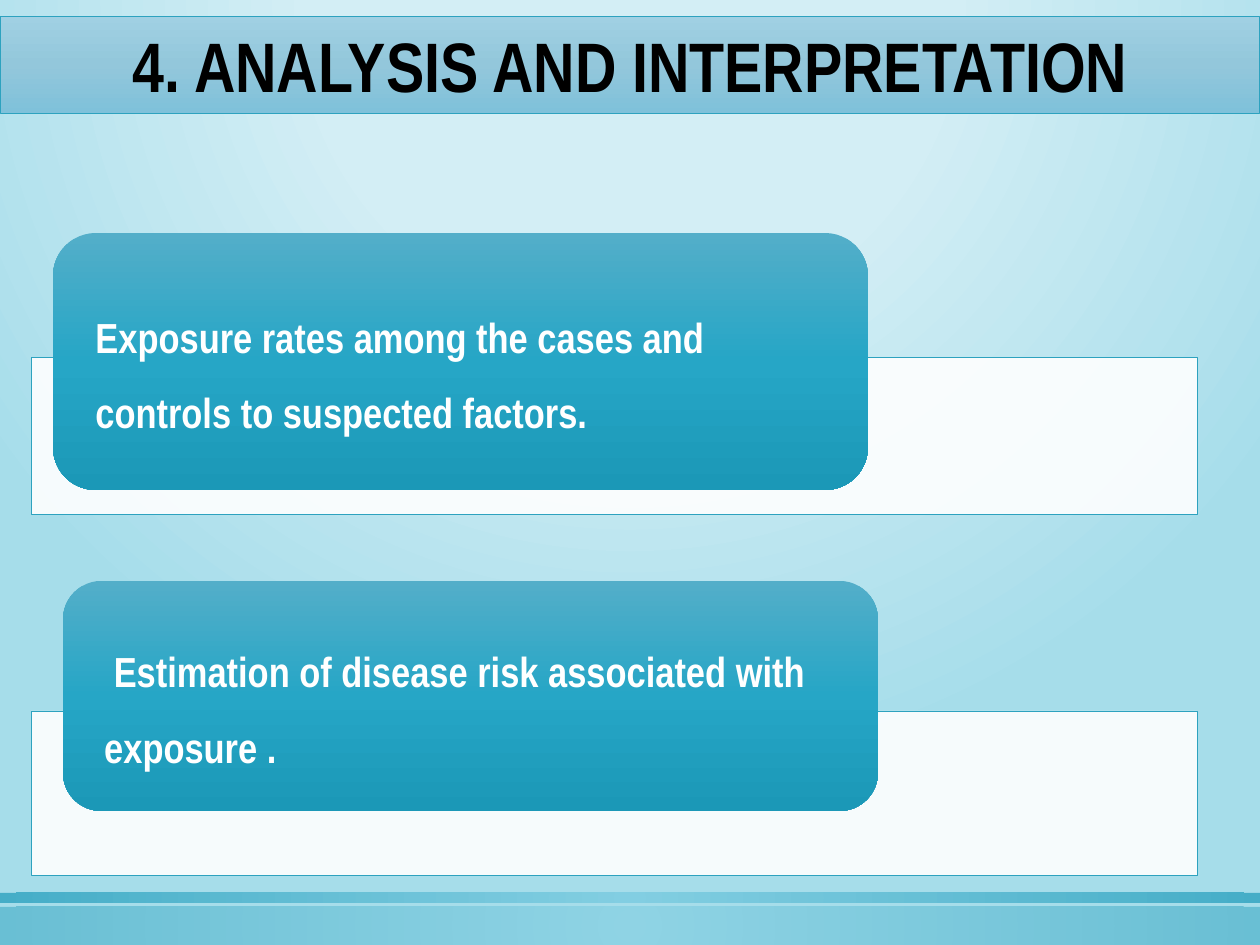
"""Build the slide on analysis and interpretation."""
from lxml import etree
from pptx import Presentation
from pptx import util as u
from pptx.dml.color import RGBColor
from pptx.enum import shapes, text
from pptx.oxml.ns import qn

PX = u.Inches(1) // 126
WIDTH, HEIGHT = 1260, 945
FONT = "Arial Narrow"

BLACK = RGBColor(0x00, 0x00, 0x00)
WHITE = RGBColor(0xFF, 0xFF, 0xFF)
TEAL = RGBColor(0x2D, 0xA2, 0xBF)
AQUA = RGBColor(0x7A, 0xCB, 0xE0)
PALE = RGBColor(0xD3, 0xEE, 0xF5)
SKY = RGBColor(0xA6, 0xDD, 0xEA)
CARD_TOP = RGBColor(0x53, 0xAE, 0xC9)
CARD_MIDDLE = RGBColor(0x26, 0xA6, 0xC6)
CARD_BOTTOM = RGBColor(0x1B, 0x98, 0xB7)
TITLE_TOP = RGBColor(0xA0, 0xD0, 0xE3)
TITLE_MIDDLE = RGBColor(0x93, 0xC7, 0xDB)
TITLE_BOTTOM = RGBColor(0x7F, 0xC1, 0xDA)

TITLE = "4. ANALYSIS AND INTERPRETATION"
TITLE_BOX = (0, 16, WIDTH, 97)
TITLE_INDENT = 38
BACKDROP_STOPS = [(0, PALE), (40, PALE), (100, SKY)]
BACKDROP_FOCUS = (50, -80, 50, 180)
BAR_STOPS = [(0, AQUA), (100, TEAL)]
BAR_FOCUS = (50, 50, 50, 50)
CARD_STOPS = [(0, CARD_TOP), (50, CARD_MIDDLE), (100, CARD_BOTTOM)]
TITLE_STOPS = [(0, TITLE_TOP), (50, TITLE_MIDDLE), (100, TITLE_BOTTOM)]
CARD_INSET = 30

FOOTER_BARS = [((0, 907, WIDTH, 38), 50), ((0, 893, WIDTH, 10), 80)]
STEPS = [
    ("Exposure rates among the cases and controls to suspected factors.",
     (31, 357, 1166, 157), (53, 233, 815, 257)),
    (" Estimation of disease risk associated with exposure .",
     (31, 711, 1166, 165), (63, 581, 815, 230)),
]


def set_alpha(color, percent):
    etree.SubElement(color, qn("a:alpha"), val=str(percent * 1000))


def set_gradient(owner, holder, stops, focus=None, alpha=100):
    """Fill the owner, downwards or around a focus; holder is the XML parent of the fill."""
    owner.fill.solid()
    gradient = etree.Element(qn("a:gradFill"), rotWithShape="1")
    stop_list = etree.SubElement(gradient, qn("a:gsLst"))
    for position, rgb in stops:
        stop = etree.SubElement(stop_list, qn("a:gs"), pos=str(position * 1000))
        color = etree.SubElement(stop, qn("a:srgbClr"), val=str(rgb))
        if alpha < 100:
            set_alpha(color, alpha)
    if focus:
        circle = etree.SubElement(gradient, qn("a:path"), path="circle")
        etree.SubElement(circle, qn("a:fillToRect"),
                         {side: str(share * 1000) for side, share in zip("ltrb", focus)})
    else:
        etree.SubElement(gradient, qn("a:lin"), ang="5400000", scaled="0")
    holder.replace(holder.find(qn("a:solidFill")), gradient)


def add_box(slide, box, outlined=False, preset=shapes.MSO_SHAPE.RECTANGLE):
    shape = slide.shapes.add_shape(preset, *(side * PX for side in box))
    shape.shadow.inherit = False
    if outlined:
        shape.line.color.rgb = TEAL
        shape.line.width = u.Pt(0.5)
    else:
        shape.line.fill.background()
    return shape


def write(shape, words, size, color, align, anchor):
    frame = shape.text_frame
    frame.text = words
    frame.word_wrap = True
    frame.vertical_anchor = anchor
    paragraph = frame.paragraphs[0]
    paragraph.alignment = align
    font = paragraph.runs[0].font
    font.name, font.size, font.bold = FONT, u.Pt(size), True
    font.color.rgb = color
    return frame, paragraph


def add_step(slide, words, panel_box, card_box):
    panel = add_box(slide, panel_box, outlined=True)
    panel.fill.solid()
    panel.fill.fore_color.rgb = WHITE
    set_alpha(panel.element.spPr.find(qn("a:solidFill"))[0], 90)

    card = add_box(slide, card_box, preset=shapes.MSO_SHAPE.ROUNDED_RECTANGLE)
    set_gradient(card, card.element.spPr, CARD_STOPS)
    frame, paragraph = write(card, words, 24, WHITE, text.PP_ALIGN.LEFT, text.MSO_ANCHOR.MIDDLE)
    frame.margin_left = frame.margin_right = CARD_INSET * PX
    frame.margin_top = frame.margin_bottom = 0
    paragraph.line_spacing = 1.5
    paragraph.space_after = u.Pt(8.4)


def add_title(slide):
    banner = add_box(slide, TITLE_BOX, outlined=True)
    set_gradient(banner, banner.element.spPr, TITLE_STOPS)
    frame, paragraph = write(banner, TITLE, 40, BLACK, text.PP_ALIGN.CENTER, text.MSO_ANCHOR.TOP)
    frame.auto_size = text.MSO_AUTO_SIZE.SHAPE_TO_FIT_TEXT
    properties = paragraph._p.get_or_add_pPr()
    properties.set("marL", str(TITLE_INDENT * PX))
    properties.set("indent", str(-TITLE_INDENT * PX))


def main():
    deck = Presentation()
    deck.slide_width, deck.slide_height = WIDTH * PX, HEIGHT * PX
    slide = deck.slides.add_slide(deck.slide_layouts[6])
    backdrop = slide.background
    backdrop.fill.solid()
    set_gradient(backdrop, slide.element.find(".//" + qn("p:bgPr")), BACKDROP_STOPS, BACKDROP_FOCUS)
    for box, alpha in FOOTER_BARS:
        bar = add_box(slide, box)
        set_gradient(bar, bar.element.spPr, BAR_STOPS, BAR_FOCUS, alpha)
    for step in STEPS:
        add_step(slide, *step)
    add_title(slide)
    deck.save("out.pptx")


if __name__ == "__main__":
    main()
